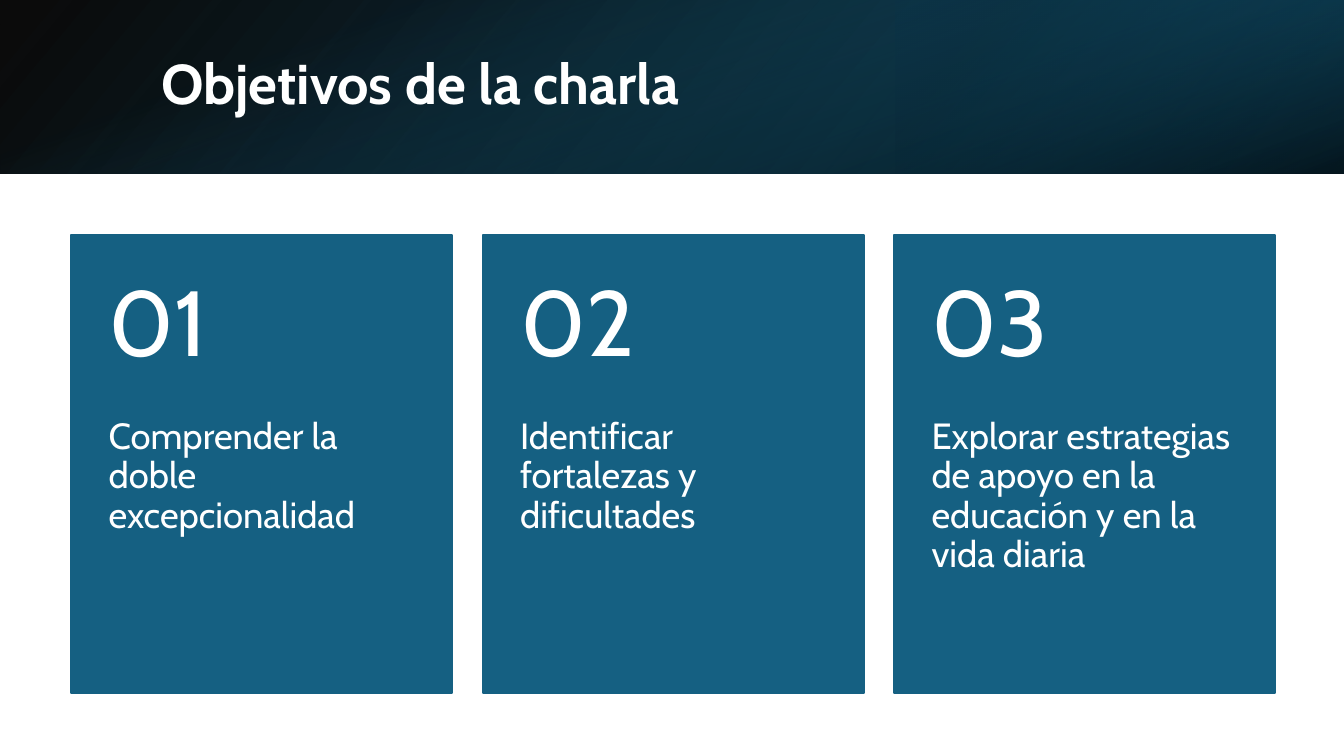
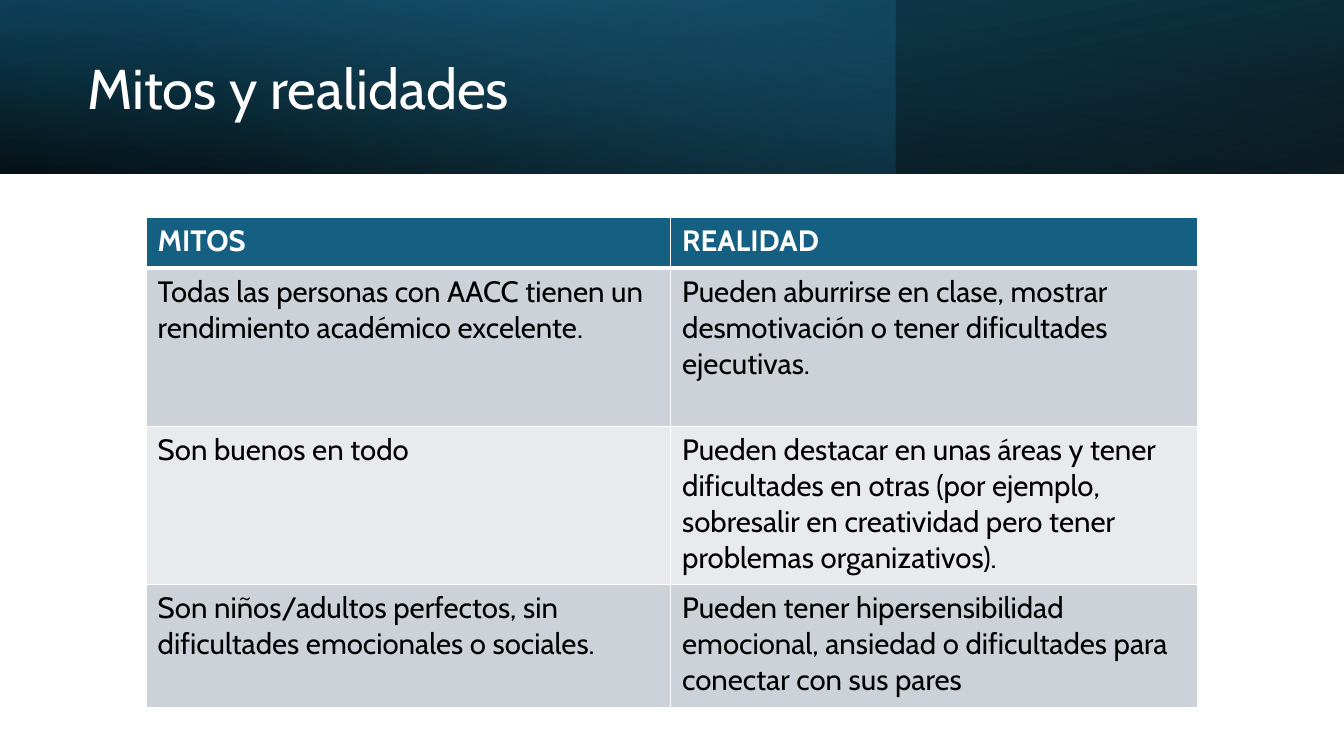
"""Build two slides of a talk on twice exceptionality: its goals, then myths and realities."""
import dataclasses
import typing

import lxml.etree
import pptx
import pptx.dml.color
import pptx.enum.shapes
import pptx.enum.text
import pptx.oxml.ns
import pptx.util

Pt = pptx.util.Pt
qn = pptx.oxml.ns.qn
Anchor = pptx.enum.text.MSO_ANCHOR


@dataclasses.dataclass(frozen=True)
class Theme:
    font: str = "Cabin"
    white: str = "FFFFFF"
    black: str = "000000"
    blue: str = "156082"
    deep_blue: str = "104862"
    night_blue: str = "0B3041"
    sky: str = "46B1E1"
    row_dark: str = "CCD2D8"
    row_light: str = "E8EAED"
    title_size: float = 40
    number_size: float = 66
    goal_size: float = 26
    table_size: float = 21


class Box(typing.NamedTuple):
    left: float
    top: float
    width: float
    height: float


class Stop(typing.NamedTuple):
    position: int
    color: str
    opacity: int = 100


@dataclasses.dataclass(frozen=True)
class Layer:
    box: Box
    stops: tuple[Stop, ...]
    angle: int
    rotation: int = 0
    flipped: bool = False


THEME = Theme()
SLIDE_WIDTH, SLIDE_HEIGHT = 960, 540
BAND_HEIGHT = 124.2
BAND = Box(0, 0, SLIDE_WIDTH, BAND_HEIGHT)
BAND_OFFSET = (SLIDE_WIDTH - BAND_HEIGHT) / 2
UPRIGHT_BAND = Box(BAND_OFFSET, -BAND_OFFSET, BAND_HEIGHT, SLIDE_WIDTH)
THIRD = SLIDE_WIDTH / 3
BASE_STOPS = (Stop(0, THEME.black, 96), Stop(100, THEME.deep_blue))

GOALS_BAND = (
    Layer(BAND, BASE_STOPS, 140, flipped=True),
    Layer(Box(2 * THIRD, 0, THIRD, BAND_HEIGHT),
          (Stop(19, THEME.night_blue, 68), Stop(100, THEME.blue, 79)), 320, 180, True),
    Layer(UPRIGHT_BAND, (Stop(23, THEME.blue, 0), Stop(99, THEME.black, 74)), 340, 90),
)
MYTHS_BAND = (
    Layer(BAND, BASE_STOPS, 100, 180, True),
    Layer(Box(0, 0, 2 * THIRD, BAND_HEIGHT),
          (Stop(0, THEME.blue, 41), Stop(74, THEME.sky, 0)), 140),
    Layer(BAND, (Stop(0, THEME.black, 63), Stop(78, THEME.blue, 15)), 260, flipped=True),
)

GOALS = (
    "Comprender la doble excepcionalidad",
    "Identificar fortalezas y dificultades",
    "Explorar estrategias de apoyo en la educación y en la vida diaria",
)
FIRST_CARD = Box(50.8, 167.8, 272.2, 327)
CARD_PITCH = 293.9
NUMBER_HEIGHT = 131
CARD_INSET = 26.8

MYTHS = (
    ("MITOS", "REALIDAD"),
    ("Todas las personas con AACC tienen un rendimiento académico excelente.",
     "Pueden aburrirse en clase, mostrar desmotivación o tener dificultades ejecutivas."),
    ("Son buenos en todo",
     "Pueden destacar en unas áreas y tener dificultades en otras (por ejemplo, "
     "sobresalir en creatividad pero tener problemas organizativos)."),
    ("Son niños/adultos perfectos, sin dificultades emocionales o sociales.",
     "Pueden tener hipersensibilidad emocional, ansiedad o dificultades para "
     "conectar con sus pares"),
)
COLUMN_WIDTHS = (374.6, 376.6)
ROW_HEIGHTS = (36.7, 113, 113, 87.8)
TABLE_BOX = Box(104.3, 155, sum(COLUMN_WIDTHS), sum(ROW_HEIGHTS))


def rgb(color: str) -> pptx.dml.color.RGBColor:
    """Turn a hex string into a colour."""
    return pptx.dml.color.RGBColor.from_string(color)


def points(box: Box) -> tuple[pptx.util.Length, ...]:
    """Turn a box into lengths."""
    return tuple(Pt(length) for length in box)


def add_color(parent, color: str, opacity: int = 100) -> None:
    """Append a colour element with its opacity."""
    value = lxml.etree.SubElement(parent, qn("a:srgbClr"), val=color)
    if opacity < 100:
        lxml.etree.SubElement(value, qn("a:alpha"), val=str(opacity * 1000))


def write(frame, text: str, *, size: float, color: str = THEME.white,
          bold: bool = False, spacing: float = 1.0) -> None:
    """Put one formatted paragraph into a text frame."""
    frame.word_wrap = True
    paragraph = frame.paragraphs[0]
    paragraph.line_spacing = spacing
    run = paragraph.add_run()
    run.text = text
    run.font.name = THEME.font
    run.font.size = Pt(size)
    run.font.bold = bold
    run.font.color.rgb = rgb(color)


def add_rectangle(slide, box: Box):
    """Add a rectangle without shadow."""
    rectangle = slide.shapes.add_shape(pptx.enum.shapes.MSO_SHAPE.RECTANGLE, *points(box))
    rectangle.shadow.inherit = False
    return rectangle


def add_layer(slide, layer: Layer) -> None:
    """Draw one gradient layer of the title band."""
    rectangle = add_rectangle(slide, layer.box)
    rectangle.line.fill.background()
    rectangle.rotation = layer.rotation
    properties = rectangle._element.spPr
    if layer.flipped:
        properties.find(qn("a:xfrm")).set("flipH", "1")
    gradient = lxml.etree.Element(qn("a:gradFill"))
    stops = lxml.etree.SubElement(gradient, qn("a:gsLst"))
    for stop in layer.stops:
        mark = lxml.etree.SubElement(stops, qn("a:gs"), pos=str(stop.position * 1000))
        add_color(mark, stop.color, stop.opacity)
    lxml.etree.SubElement(gradient, qn("a:lin"), ang=str(layer.angle * 60000), scaled="0")
    properties.find(qn("a:prstGeom")).addnext(gradient)


def add_titled_slide(deck, title: str, box: Box, band: tuple[Layer, ...], bold: bool = False):
    """Add a slide with its band and the title over it."""
    slide = deck.slides.add_slide(deck.slide_layouts[5])
    for layer in band:
        add_layer(slide, layer)
    heading = slide.shapes.title
    heading.left, heading.top, heading.width, heading.height = points(box)
    frame = heading.text_frame
    frame.auto_size = pptx.enum.text.MSO_AUTO_SIZE.NONE
    frame.vertical_anchor = Anchor.MIDDLE
    write(frame, title, size=THEME.title_size, bold=bold, spacing=0.9)
    frame.paragraphs[0].alignment = pptx.enum.text.PP_ALIGN.LEFT
    slide.shapes._spTree.append(heading._element)
    return slide


def add_card_text(slide, box: Box, text: str, size: float, anchor: Anchor) -> None:
    """Add a text box with the card's side insets."""
    frame = slide.shapes.add_textbox(*points(box)).text_frame
    frame.margin_left = frame.margin_right = Pt(CARD_INSET)
    frame.margin_top = frame.margin_bottom = 0
    frame.vertical_anchor = anchor
    write(frame, text, size=size, spacing=0.9)


def add_goal_card(slide, index: int, goal: str) -> None:
    """Draw one numbered goal card."""
    card = FIRST_CARD._replace(left=FIRST_CARD.left + index * CARD_PITCH)
    panel = add_rectangle(slide, card)
    panel.fill.solid()
    panel.fill.fore_color.rgb = rgb(THEME.blue)
    panel.line.color.rgb = rgb(THEME.blue)
    panel.line.width = Pt(1.5)
    goal_box = card._replace(top=card.top + NUMBER_HEIGHT, height=card.height - NUMBER_HEIGHT)
    add_card_text(slide, goal_box, goal, THEME.goal_size, Anchor.TOP)
    add_card_text(slide, card._replace(height=NUMBER_HEIGHT), f"{index + 1:02}",
                  THEME.number_size, Anchor.MIDDLE)


def set_borders(cell, top: float, bottom: float) -> None:
    """Give a cell white borders of the given widths."""
    properties = cell._tc.get_or_add_tcPr()
    widths = {"a:lnL": 1, "a:lnR": 1, "a:lnT": top, "a:lnB": bottom}
    for position, (tag, width) in enumerate(widths.items()):
        border = lxml.etree.Element(qn(tag), w=str(Pt(width)))
        add_color(lxml.etree.SubElement(border, qn("a:solidFill")), THEME.white)
        properties.insert(position, border)


def add_myths_table(slide) -> None:
    """Draw the table of myths and realities."""
    table = slide.shapes.add_table(len(MYTHS), len(COLUMN_WIDTHS), *points(TABLE_BOX)).table
    for column, width in zip(table.columns, COLUMN_WIDTHS):
        column.width = Pt(width)
    for index, (row, height, texts) in enumerate(zip(table.rows, ROW_HEIGHTS, MYTHS)):
        row.height = Pt(height)
        header = index == 0
        band_fill = THEME.row_dark if index % 2 else THEME.row_light
        for cell, text in zip(row.cells, texts):
            cell.margin_left = cell.margin_right = Pt(8.4)
            cell.margin_top = cell.margin_bottom = Pt(4.2)
            cell.fill.solid()
            cell.fill.fore_color.rgb = rgb(THEME.blue if header else band_fill)
            set_borders(cell, top=3 if index == 1 else 1, bottom=3 if header else 1)
            write(cell.text_frame, text, size=THEME.table_size, bold=header,
                  color=THEME.white if header else THEME.black)


def main() -> None:
    """Build and save the deck."""
    deck = pptx.Presentation()
    deck.slide_width, deck.slide_height = Pt(SLIDE_WIDTH), Pt(SLIDE_HEIGHT)

    goals = add_titled_slide(deck, "Objetivos de la charla", Box(108, 27.4, 790.6, 69.1),
                             GOALS_BAND, bold=True)
    for index, goal in enumerate(GOALS):
        add_goal_card(goals, index, goal)

    myths = add_titled_slide(deck, "Mitos y realidades", Box(55.4, 19.4, 555.8, 91.4), MYTHS_BAND)
    add_myths_table(myths)

    deck.save("out.pptx")


if __name__ == "__main__":
    main()
